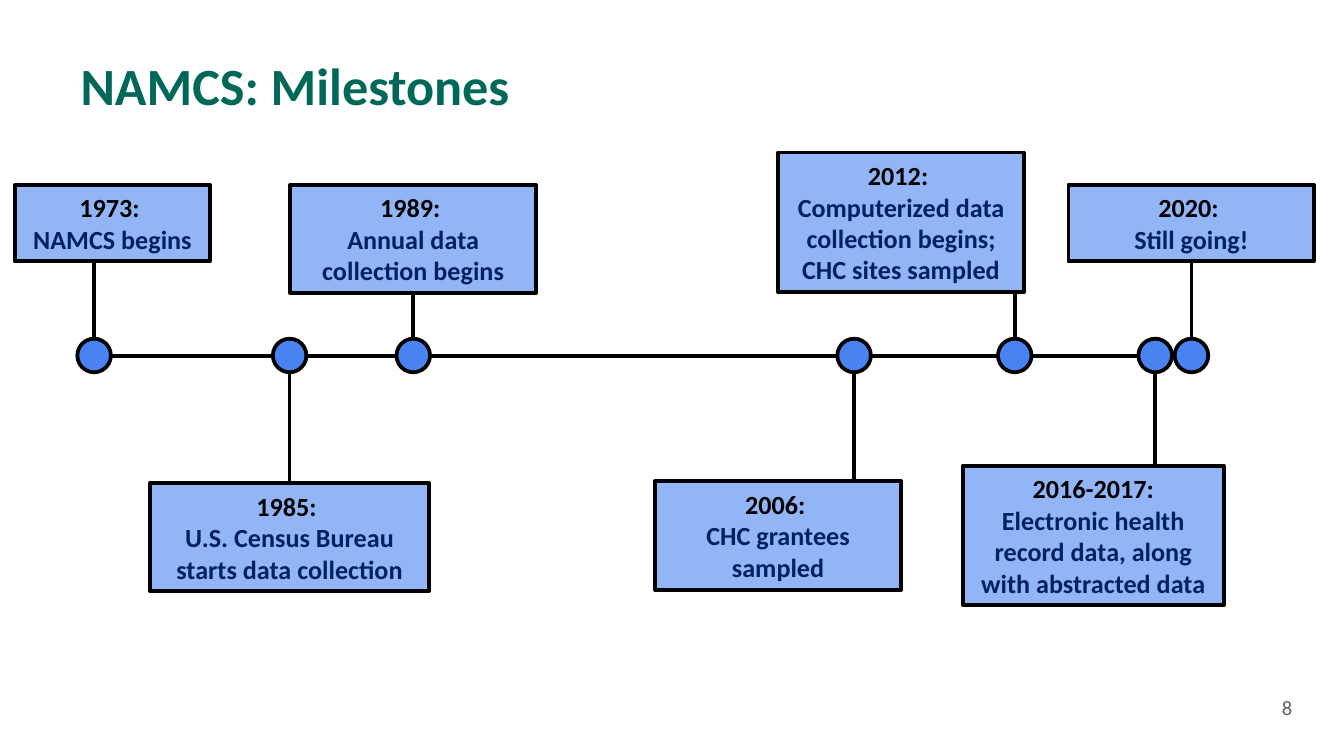
"""Build the NAMCS milestones timeline slide."""
from lxml import etree
from pptx import Presentation
from pptx.dml.color import RGBColor
from pptx.enum.shapes import MSO_CONNECTOR, MSO_SHAPE
from pptx.enum.text import MSO_ANCHOR, PP_ALIGN
from pptx.oxml.ns import qn
from pptx.util import Pt

STRAIGHT = MSO_CONNECTOR.STRAIGHT
RECTANGLE = MSO_SHAPE.RECTANGLE
CIRCLE = MSO_SHAPE.FLOWCHART_CONNECTOR
LEFT, CENTER = PP_ALIGN.LEFT, PP_ALIGN.CENTER
MIDDLE, BOTTOM = MSO_ANCHOR.MIDDLE, MSO_ANCHOR.BOTTOM
TOP_SITE, BOTTOM_SITE = 0, 2

PX = 4572
AXIS_Y = 530
DOT = 50
DOT_TOP = 504
DOT_BOTTOM = DOT_TOP + DOT

MILESTONES = [
    (140, (22, 275, 291, 114), ["1973: ", "NAMCS begins"]),
    (431, (223, 719, 416, 161), ["1985: ", "U.S. Census Bureau starts data collection"]),
    (615, (432, 275, 366, 161), ["1989: ", "Annual data collection begins"]),
    (1271, (975, 716, 366, 162), ["2006: ", "CHC grantees sampled"]),
    (1510, (1158, 227, 366, 208),
     ["2012: ", "Computerized data collection begins;", "CHC sites sampled"]),
    (1773, (1590, 275, 366, 114), ["2020: ", "Still going!"]),
    (1719, (1433, 693, 388, 208),
     ["2016-2017:", "Electronic health record data, along with abstracted data"]),
]


def color(value):
    return RGBColor.from_string(value)


def add_line(start_x, start_y, end_x, end_y):
    line = slide.shapes.add_connector(
        STRAIGHT, start_x * PX, start_y * PX, end_x * PX, end_y * PX)
    line.line.color.rgb = color("000000")
    line.line.width = Pt(2)
    etree.SubElement(line._element.spPr, qn("a:effectLst"))
    return line


presentation = Presentation()
presentation.slide_width = 2000 * PX
presentation.slide_height = 1125 * PX
slide = presentation.slides.add_slide(presentation.slide_layouts[5])

title = slide.shapes.title
title.left, title.top, title.width, title.height = 100 * PX, 48 * PX, 1800 * PX, 134 * PX
title.text_frame.text = "NAMCS: Milestones"
title.text_frame.vertical_anchor = BOTTOM
paragraph = title.text_frame.paragraphs[0]
paragraph.alignment = LEFT
paragraph.line_spacing = Pt(30)
paragraph.font.name = "Calibri"
paragraph.font.size = Pt(28)
paragraph.font.bold = True
paragraph.font.color.rgb = color("006858")

add_line(MILESTONES[0][0], AXIS_Y, 1756, AXIS_Y)

for center, (left, top, width, height), texts in MILESTONES:
    box = slide.shapes.add_shape(RECTANGLE, left * PX, top * PX, width * PX, height * PX)
    dot = slide.shapes.add_shape(
        CIRCLE, (center - DOT // 2) * PX, DOT_TOP * PX, DOT * PX, DOT * PX)
    for shape, fill in ((box, "92B5F7"), (dot, "4983F2")):
        shape.shadow.inherit = False
        shape.fill.solid()
        shape.fill.fore_color.rgb = color(fill)
        shape.line.color.rgb = color("000000")
        shape.line.width = Pt(2)

    box.text_frame.text = "\n".join(texts)
    box.text_frame.word_wrap = True
    box.text_frame.vertical_anchor = MIDDLE
    for index, paragraph in enumerate(box.text_frame.paragraphs):
        paragraph.alignment = CENTER
        paragraph.font.name = "Calibri"
        paragraph.font.size = Pt(14)
        paragraph.font.bold = True
        paragraph.font.color.rgb = color("002060" if index else "000000")

    above = top < AXIS_Y
    box_edge = top + height if above else top
    stem = add_line(center, box_edge, center, DOT_TOP if above else DOT_BOTTOM)
    if left + width / 2 == center:
        stem.begin_connect(box, BOTTOM_SITE if above else TOP_SITE)

number = slide.shapes.add_textbox(1888 * PX, 1025 * PX, 82 * PX, 58 * PX)
number.text_frame.word_wrap = True
number.text_frame.text = "8"
paragraph = number.text_frame.paragraphs[0]
paragraph.font.name = "Calibri"
paragraph.font.size = Pt(11)
paragraph.font.color.rgb = color("5F5F5F")

presentation.save("out.pptx")
